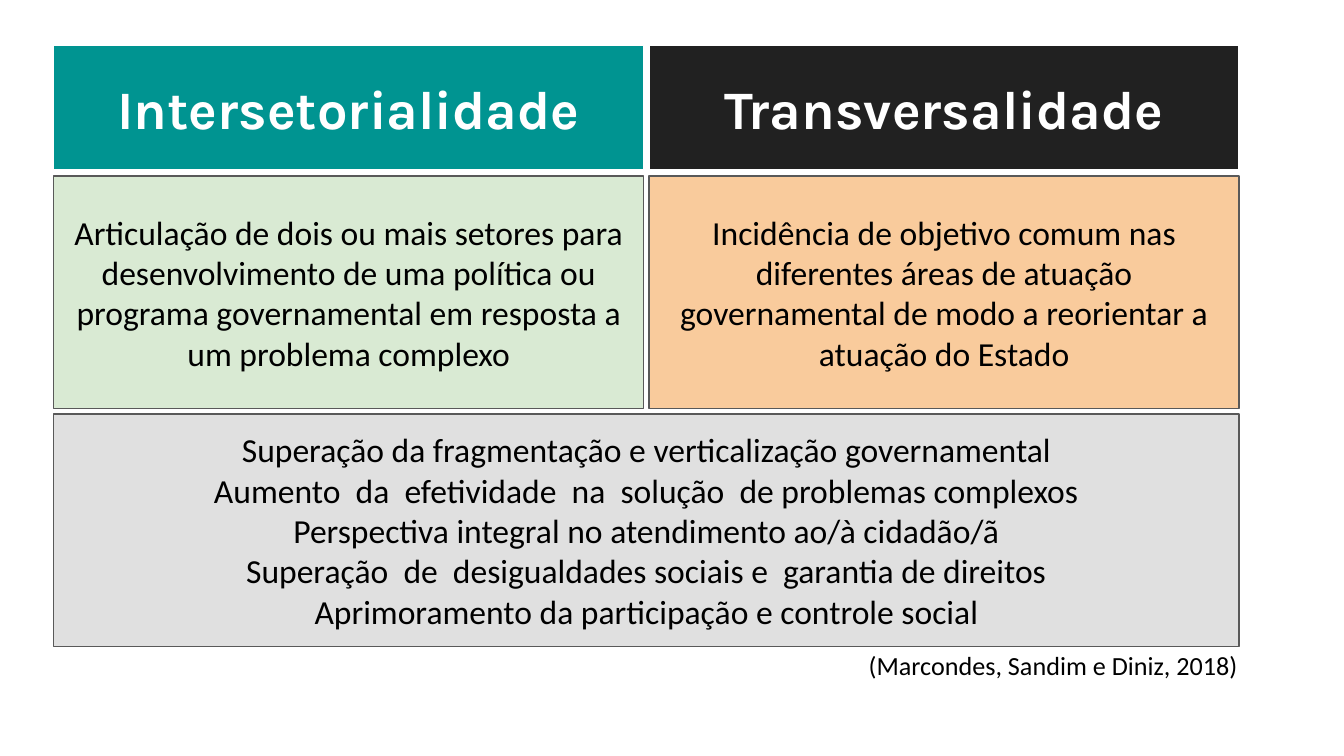
from dataclasses import dataclass

from pptx import Presentation
from pptx.dml.color import RGBColor
from pptx.enum.shapes import MSO_SHAPE
from pptx.enum.text import MSO_ANCHOR, PP_ALIGN
from pptx.slide import Slide
from pptx.text.text import TextFrame
from pptx.util import Inches, Pt

COLORS = {
    "white": "FFFFFF",
    "black": "000000",
    "teal": "009491",
    "charcoal": "212121",
    "green": "D9EAD3",
    "orange": "F9CB9C",
    "gray": "E0E0E0",
    "border": "595959",
}

LEFT = 0.4
COLUMN_WIDTH = 4.39
GAP = 0.04
FULL_WIDTH = 2 * COLUMN_WIDTH + GAP
HEADER_TOP, HEADER_HEIGHT = 0.34, 0.92
BODY_TOP, BODY_HEIGHT = 1.31, 1.73
SHARED_TOP = BODY_TOP + BODY_HEIGHT + GAP


@dataclass(frozen=True)
class TextStyle:
    font: str
    size: int
    color: str
    bold: bool = False
    align: PP_ALIGN = PP_ALIGN.CENTER
    line_spacing: float = 1.0


@dataclass(frozen=True)
class Panel:
    left: float
    top: float
    width: float
    height: float
    fill: str
    border: str
    style: TextStyle
    lines: tuple[str, ...]


@dataclass(frozen=True)
class Concept:
    name: str
    definition: str
    header_fill: str
    body_fill: str


HEADER = TextStyle("Karla", 29, "white", bold=True)
BODY = TextStyle("Calibri", 18, "black")
CITATION = TextStyle("Calibri", 14, "black", align=PP_ALIGN.RIGHT, line_spacing=0.9)

CONCEPTS = (
    Concept(
        "Intersetorialidade",
        "Articulação de dois ou mais setores para desenvolvimento de uma política ou "
        "programa governamental em resposta a um problema complexo",
        "teal",
        "green",
    ),
    Concept(
        "Transversalidade",
        "Incidência de objetivo comum nas diferentes áreas de atuação governamental "
        "de modo a reorientar a atuação do Estado",
        "charcoal",
        "orange",
    ),
)

SHARED_RESULTS = (
    "Superação da fragmentação e verticalização governamental",
    "Aumento  da  efetividade  na  solução  de problemas complexos",
    "Perspectiva integral no atendimento ao/à cidadão/ã",
    "Superação  de  desigualdades sociais e  garantia de direitos",
    "Aprimoramento da participação e controle social",
)


def rgb(name: str) -> RGBColor:
    return RGBColor.from_string(COLORS[name])


def write_lines(frame: TextFrame, lines: tuple[str, ...], style: TextStyle) -> None:
    frame.word_wrap = True
    frame.margin_left = frame.margin_right = Inches(0.1)
    frame.margin_top = frame.margin_bottom = Inches(0.1)
    for index, line in enumerate(lines):
        para = frame.add_paragraph() if index else frame.paragraphs[0]
        para.alignment = style.align
        para.line_spacing = style.line_spacing
        span = para.add_run()
        span.text = line
        span.font.name = style.font
        span.font.size = Pt(style.size)
        span.font.bold = style.bold
        span.font.color.rgb = rgb(style.color)


def draw_panel(page: Slide, panel: Panel) -> None:
    box = page.shapes.add_shape(
        MSO_SHAPE.RECTANGLE,
        Inches(panel.left),
        Inches(panel.top),
        Inches(panel.width),
        Inches(panel.height),
    )
    box.shadow.inherit = False
    box.fill.solid()
    box.fill.fore_color.rgb = rgb(panel.fill)
    box.line.color.rgb = rgb(panel.border)
    box.line.width = Pt(0.75)
    box.text_frame.vertical_anchor = MSO_ANCHOR.MIDDLE
    write_lines(box.text_frame, panel.lines, panel.style)


def draw_concept(page: Slide, concept: Concept, column: int) -> None:
    left = LEFT + column * (COLUMN_WIDTH + GAP)
    draw_panel(page, Panel(left, HEADER_TOP, COLUMN_WIDTH, HEADER_HEIGHT,
                           concept.header_fill, "white", HEADER, (concept.name,)))
    draw_panel(page, Panel(left, BODY_TOP, COLUMN_WIDTH, BODY_HEIGHT,
                           concept.body_fill, "border", BODY, (concept.definition,)))


def main() -> None:
    deck = Presentation()
    deck.slide_width = Inches(10)
    deck.slide_height = Inches(10 * 9 / 16)
    page = deck.slides.add_slide(deck.slide_layouts.get_by_name("Blank"))

    for column, concept in enumerate(CONCEPTS):
        draw_concept(page, concept, column)
    draw_panel(page, Panel(LEFT, SHARED_TOP, FULL_WIDTH, BODY_HEIGHT,
                           "gray", "border", BODY, SHARED_RESULTS))

    citation = page.shapes.add_textbox(Inches(6.34), Inches(4.76), Inches(2.97), Inches(0.41))
    write_lines(citation.text_frame, ("(Marcondes, Sandim e Diniz, 2018)",), CITATION)

    deck.save("out.pptx")


if __name__ == "__main__":
    main()
